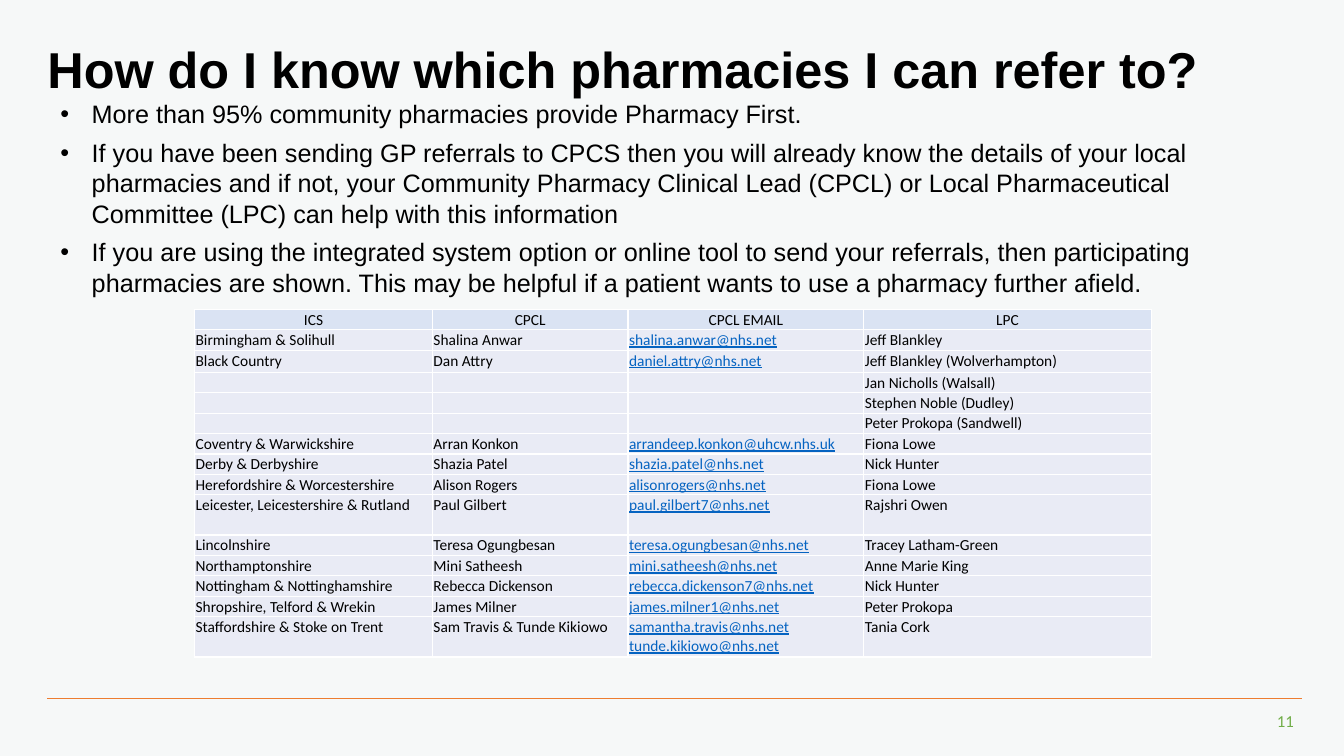
from lxml import etree
from pptx import Presentation, util as u
from pptx.dml.color import RGBColor
from pptx.enum import shapes, text
from pptx.oxml import ns

WIDE, HIGH = u.Inches(13.33), u.Inches(7.5)
BLACK, BLUE = "000000", "0563C1"
TITLE = "How do I know which pharmacies I can refer to?"
POINTS = [
    "More than 95% community pharmacies provide Pharmacy First.",
    "If you have been sending GP referrals to CPCS then you will already know "
    "the details of your local pharmacies and if not, your Community Pharmacy "
    "Clinical Lead (CPCL) or Local Pharmaceutical Committee (LPC) can help "
    "with this information",
    "If you are using the integrated system option or online tool to send your "
    "referrals, then participating pharmacies are shown. This may be helpful "
    "if a patient wants to use a pharmacy further afield.",
]
LEADS = [
    ("ICS", "CPCL", "CPCL EMAIL", "LPC"),
    ("Birmingham & Solihull", "Shalina Anwar", "shalina.anwar@nhs.net", "Jeff Blankley"),
    ("Black Country", "Dan Attry", "daniel.attry@nhs.net", "Jeff Blankley (Wolverhampton)"),
    ("", "", "", "Jan Nicholls (Walsall)"),
    ("", "", "", "Stephen Noble (Dudley)"),
    ("", "", "", "Peter Prokopa (Sandwell)"),
    ("Coventry & Warwickshire", "Arran Konkon", "arrandeep.konkon@uhcw.nhs.uk", "Fiona Lowe"),
    ("Derby & Derbyshire", "Shazia Patel", "shazia.patel@nhs.net", "Nick Hunter"),
    ("Herefordshire & Worcestershire", "Alison Rogers", "alisonrogers@nhs.net", "Fiona Lowe"),
    ("Leicester, Leicestershire & Rutland", "Paul Gilbert", "paul.gilbert7@nhs.net", "Rajshri Owen"),
    ("Lincolnshire", "Teresa Ogungbesan", "teresa.ogungbesan@nhs.net", "Tracey Latham-Green"),
    ("Northamptonshire", "Mini Satheesh", "mini.satheesh@nhs.net", "Anne Marie King"),
    ("Nottingham & Nottinghamshire", "Rebecca Dickenson", "rebecca.dickenson7@nhs.net", "Nick Hunter"),
    ("Shropshire, Telford & Wrekin", "James Milner", "james.milner1@nhs.net", "Peter Prokopa"),
    ("Staffordshire & Stoke on Trent", "Sam Travis & Tunde Kikiowo",
     "samantha.travis@nhs.net\ntunde.kikiowo@nhs.net", "Tania Cork"),
]
COLS = (17.7, 14.55, 17.55, 21.38)
ROW = 2.7
TALL = {2: 2.93, 9: 5.33, 14: 5.33}


def color(code):
    return RGBColor.from_string(code)


def across(share):
    return round(WIDE * share / 100)


def down(share):
    return round(HIGH * share / 100)


def place(x, y, w, h):
    return across(x), down(y), across(w), down(h)


def add(parent, tag, **attrs):
    return etree.SubElement(parent, ns.qn(tag), attrs)


def style(para, size, face, code, bold=False, line=False):
    for run in para.runs:
        font = run.font
        font.size, font.name, font.bold = u.Pt(size), face, bold
        font.underline = line
        font.color.rgb = color(code)


def add_box(slide, spot, words, size, face, code, bold=False, inset=0):
    frame = slide.shapes.add_textbox(*place(*spot)).text_frame
    frame.word_wrap = True
    frame.margin_left = frame.margin_right = u.Inches(inset)
    frame.margin_top = frame.margin_bottom = u.Inches(inset / 2)
    frame.text = words
    for para in frame.paragraphs:
        style(para, size, face, code, bold)
    return frame


def add_bullet(para):
    props = para._p.get_or_add_pPr()
    dent = u.Inches(0.31)
    props.set("marL", str(dent))
    props.set("indent", str(-dent))
    add(add(props, "a:buClr"), "a:srgbClr", val=BLACK)
    add(props, "a:buFont", typeface="Arial")
    add(props, "a:buChar", char="•")
    para.space_after = u.Pt(6)


def add_rule(slide, left, right, y):
    rule = slide.shapes.add_connector(
        shapes.MSO_CONNECTOR.STRAIGHT, across(left), down(y), across(right), down(y))
    rule.line.color.rgb = color("ED7D31")
    rule.line.width = u.Pt(0.5)
    add(rule._element.spPr, "a:effectLst")


def add_edges(cell):
    props = cell._tc.get_or_add_tcPr()
    for side in ("L", "R", "T", "B"):
        edge = add(props, f"a:ln{side}", w=str(u.Pt(1)))
        add(add(edge, "a:solidFill"), "a:srgbClr", val="FFFFFF")


def fill_cell(cell, words, head, mail):
    add_edges(cell)
    cell.fill.solid()
    cell.fill.fore_color.rgb = color("DAE3F3" if head else "E9EBF5")
    cell.margin_left = cell.margin_right = cell.margin_top = u.Inches(0.01)
    cell.margin_bottom = 0
    cell.text_frame.text = words
    for para in cell.text_frame.paragraphs:
        if head:
            para.alignment = text.PP_ALIGN.CENTER
        if not words:
            add(para._p, "a:endParaRPr", sz="1100")
        style(para, 11, "Calibri", BLUE if mail else BLACK, line=mail)


def add_leads(slide):
    rows = [TALL.get(i, ROW) for i in range(len(LEADS))]
    spot = place(14.48, 40.93, sum(COLS), sum(rows))
    table = slide.shapes.add_table(len(rows), len(COLS), *spot).table
    table.first_row = table.horz_banding = False
    for col, share in zip(table.columns, COLS):
        col.width = across(share)
    for row, share in zip(table.rows, rows):
        row.height = down(share)
    for r, lead in enumerate(LEADS):
        for c, words in enumerate(lead):
            fill_cell(table.cell(r, c), words, r == 0, r > 0 and c == 2)


def main():
    deck = Presentation()
    deck.slide_width, deck.slide_height = WIDE, HIGH
    slide = deck.slides.add_slide(deck.slide_layouts[6])
    back = slide.background.fill
    back.solid()
    back.fore_color.rgb = color("F6F8F8")

    number = add_box(slide, (93.92, 93.33, 3.08, 4), "11", 12, "Calibri", "70AD47", inset=0.1)
    number.paragraphs[0].alignment = text.PP_ALIGN.RIGHT
    add_rule(slide, 3.53, 96.85, 92.4)

    body = add_box(slide, (4.5, 13.07, 91, 73.87), "\n".join(POINTS), 18, "Arial", BLACK)
    for para in body.paragraphs:
        add_bullet(para)

    title = add_box(slide, (3.53, 1.6, 93.55, 15.87), TITLE, 36, "Arial", BLACK, bold=True)
    title.vertical_anchor = text.MSO_ANCHOR.MIDDLE
    title.paragraphs[0].line_spacing = 0.9
    add_leads(slide)
    deck.save("out.pptx")


if __name__ == "__main__":
    main()
